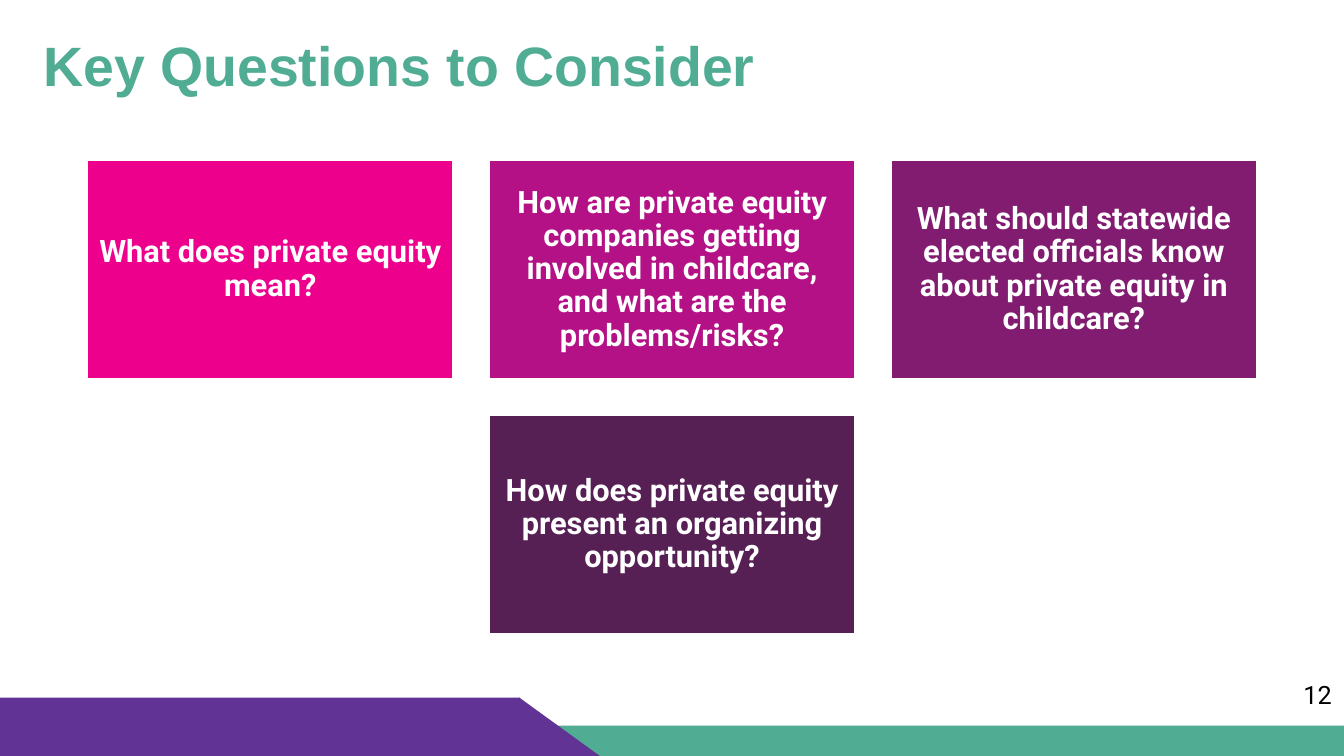
from pptx import Presentation
from pptx import util as u
from pptx.dml import color
from pptx.enum import shapes, text

COLOURS = {
    "teal": "50AC93",
    "violet": "613395",
    "white": "FFFFFF",
    "black": "000000",
    "pink": "EC008C",
    "magenta": "B31185",
    "plum": "821C71",
    "aubergine": "572055",
}

TITLE_FONT = {"name": "Arial", "size": u.Pt(39.6), "bold": True}
NUMBER_FONT = {"name": "Roboto", "size": u.Pt(18), "bold": False}
QUESTION_FONT = {"name": "Roboto", "size": u.Pt(22), "bold": True}

QUESTIONS = [
    ("What does private equity mean?", "pink", 0, 0),
    ("How are private equity companies getting involved in childcare, "
     "and what are the problems/risks?", "magenta", 1, 0),
    ("What should statewide elected officials know about private equity "
     "in childcare?", "plum", 2, 0),
    ("How does private equity present an organizing opportunity?",
     "aubergine", 1, 1),
]
CARD_LEFT, CARD_TOP = 0.87, 1.59
CARD_WIDTH, CARD_HEIGHT = 3.62, 2.17
COLUMN_STEP, ROW_STEP = 3.985, 2.53


def rgb(name):
    return color.RGBColor.from_string(COLOURS[name])


def apply(target, values):
    for attribute, value in values.items():
        setattr(target, attribute, value)


def write(frame, wording, font, ink, align, anchor, spacing=1.0, inset=(0.1, 0.05)):
    across, down = (u.Inches(side) for side in inset)
    apply(frame, {
        "word_wrap": True,
        "auto_size": text.MSO_AUTO_SIZE.NONE,
        "vertical_anchor": anchor,
        "margin_left": across,
        "margin_right": across,
        "margin_top": down,
        "margin_bottom": down,
    })
    paragraph = frame.paragraphs[0]
    apply(paragraph, {"alignment": align, "line_spacing": spacing})
    run = paragraph.add_run()
    run.text = wording
    apply(run.font, font)
    run.font.color.rgb = rgb(ink)


def add_block(slide, kind, fill, left, top, width, height):
    block = slide.shapes.add_shape(
        kind, u.Inches(left), u.Inches(top), u.Inches(width), u.Inches(height))
    block.shadow.inherit = False
    block.fill.solid()
    block.fill.fore_color.rgb = rgb(fill)
    block.line.fill.background()
    return block


def add_footer(slide):
    rectangle = shapes.MSO_SHAPE.RECTANGLE
    add_block(slide, rectangle, "teal", 0, 7.2, 13.33, 0.3)
    add_block(slide, rectangle, "violet", 0, 6.92, 5.16, 0.58)
    add_block(slide, shapes.MSO_SHAPE.RIGHT_TRIANGLE, "violet",
              5.15, 6.92, 0.8, 0.58)


def add_title(slide, wording):
    heading = slide.shapes.title
    apply(heading, {"left": u.Inches(0.33), "top": u.Inches(0.33),
                    "width": u.Inches(12.67), "height": u.Inches(1.25)})
    write(heading.text_frame, wording, TITLE_FONT, "teal",
          text.PP_ALIGN.LEFT, text.MSO_ANCHOR.TOP, 0.9)


def add_page_number(slide, number):
    page_number = slide.shapes.add_textbox(
        u.Inches(12.83), u.Inches(6.69), u.Inches(0.5), u.Inches(0.4))
    write(page_number.text_frame, number, NUMBER_FONT, "black",
          text.PP_ALIGN.LEFT, text.MSO_ANCHOR.TOP)


def add_question(slide, wording, fill, column, row):
    card = add_block(slide, shapes.MSO_SHAPE.RECTANGLE, fill,
                     CARD_LEFT + column * COLUMN_STEP,
                     CARD_TOP + row * ROW_STEP, CARD_WIDTH, CARD_HEIGHT)
    card.line.color.rgb = rgb("white")
    card.line.width = u.Pt(1)
    write(card.text_frame, wording, QUESTION_FONT, "white",
          text.PP_ALIGN.CENTER, text.MSO_ANCHOR.MIDDLE, 0.9, (0.09, 0.09))


def main():
    deck = Presentation()
    apply(deck, {"slide_width": u.Inches(13.33), "slide_height": u.Inches(7.5)})
    slide = deck.slides.add_slide(deck.slide_layouts.get_by_name("Title Only"))
    add_footer(slide)
    add_title(slide, "Key Questions to Consider")
    add_page_number(slide, "12")
    for question in QUESTIONS:
        add_question(slide, *question)
    deck.save("out.pptx")


if __name__ == "__main__":
    main()
